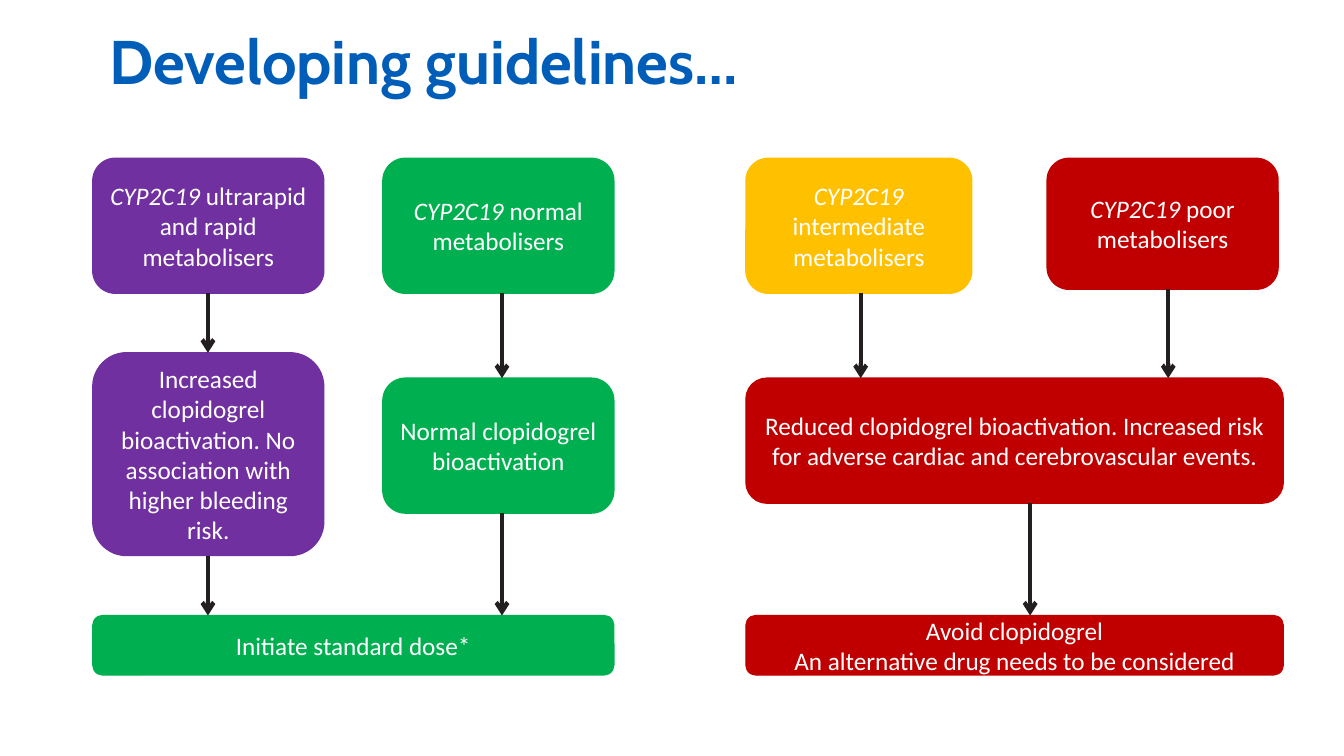
from lxml.etree import SubElement
from pptx import Presentation
from pptx.dml.color import RGBColor
from pptx.enum.shapes import MSO_CONNECTOR, MSO_SHAPE
from pptx.enum.text import MSO_ANCHOR, PP_ALIGN
from pptx.oxml.ns import qn
from pptx.util import Cm, Pt

TITLE = "Developing guidelines…"
GENE = "CYP2C19"

# name: (colour, left, top, width, height, paragraphs), lengths in cm
BOXES = {
    "rapid": ("purple", 2.34, 3.99, 5.82, 3.4, [GENE + " ultrarapid and rapid metabolisers"]),
    "normal": ("green", 9.65, 3.99, 5.82, 3.4, [GENE + " normal metabolisers"]),
    "intermediate": ("amber", 18.8, 3.99, 5.69, 3.4, [GENE + " intermediate metabolisers"]),
    "poor": ("red", 26.39, 3.99, 5.82, 3.3, [GENE + " poor metabolisers"]),
    "increased": ("purple", 2.34, 8.89, 5.82, 5.11, [
        "Increased clopidogrel bioactivation. No association with higher bleeding risk."]),
    "unchanged": ("green", 9.65, 9.53, 5.82, 3.4, ["Normal clopidogrel bioactivation"]),
    "reduced": ("red", 18.8, 9.53, 13.54, 3.15, [
        "Reduced clopidogrel bioactivation. Increased risk for adverse cardiac "
        "and cerebrovascular events."]),
    "standard": ("green", 2.34, 15.51, 13.13, 1.5, ["Initiate standard dose*"]),
    "avoid": ("red", 18.8, 15.51, 13.54, 1.5, [
        "Avoid clopidogrel", "An alternative drug needs to be considered"]),
}

# (upper box, lower box, x in cm)
ARROWS = [
    ("rapid", "increased", 5.24),
    ("increased", "standard", 5.24),
    ("normal", "unchanged", 12.65),
    ("unchanged", "standard", 12.65),
    ("intermediate", "reduced", 21.69),
    ("poor", "reduced", 29.44),
    ("reduced", "avoid", 25.96),
]

THEME = {
    "purple": RGBColor(0x70, 0x30, 0xA0),
    "green": RGBColor(0x00, 0xB0, 0x50),
    "amber": RGBColor(0xFF, 0xC0, 0x00),
    "red": RGBColor(0xC0, 0x00, 0x00),
    "title": RGBColor(0x00, 0x5E, 0xB8),
    "text": RGBColor(0xFF, 0xFF, 0xFF),
    "arrow": RGBColor(0x23, 0x1F, 0x20),
    "title_font": "Cabin",
    "body_font": "Calibri",
    "title_size": Pt(44),
    "body_size": Pt(18),
    "outline": Pt(1),
    "arrow_width": Pt(3),
}


def add_title(s):
    tf = s.shapes.add_textbox(Cm(2.5), Cm(1.17), Cm(17.7), Cm(0.89)).text_frame
    tf.word_wrap = True
    tf.vertical_anchor = MSO_ANCHOR.MIDDLE
    tf.text = TITLE
    p = tf.paragraphs[0]
    p.line_spacing = 0.9
    font = p.runs[0].font
    font.name, font.size, font.bold = THEME["title_font"], THEME["title_size"], True
    font.color.rgb = THEME["title"]


def write_paragraph(p, text):
    """Write one centred paragraph, with a leading gene name in italics."""
    p.alignment = PP_ALIGN.CENTER
    parts = [GENE, text.removeprefix(GENE)] if text.startswith(GENE) else [text]
    for part in parts:
        r = p.add_run()
        r.text = part
        r.font.name, r.font.size = THEME["body_font"], THEME["body_size"]
        r.font.color.rgb = THEME["text"]
        r.font.italic = part == GENE


def add_box(s, colour, left, top, width, height, paragraphs):
    sp = s.shapes.add_shape(MSO_SHAPE.ROUNDED_RECTANGLE,
                            Cm(left), Cm(top), Cm(width), Cm(height))
    sp.shadow.inherit = False
    sp.fill.solid()
    sp.fill.fore_color.rgb = THEME[colour]
    sp.line.color.rgb = THEME[colour]
    sp.line.width = THEME["outline"]
    tf = sp.text_frame
    tf.word_wrap = True
    tf.vertical_anchor = MSO_ANCHOR.MIDDLE
    for i, text in enumerate(paragraphs):
        write_paragraph(tf.add_paragraph() if i else tf.paragraphs[0], text)


def add_arrow(s, upper, lower, x):
    """Run a vertical arrow from the foot of one box to the top of another."""
    _, _, top, _, height, _ = BOXES[upper]
    end = BOXES[lower][2]
    line = s.shapes.add_connector(MSO_CONNECTOR.STRAIGHT,
                                  Cm(x), Cm(top + height), Cm(x), Cm(end))
    line.line.color.rgb = THEME["arrow"]
    line.line.width = THEME["arrow_width"]
    SubElement(line.line._get_or_add_ln(), qn("a:tailEnd"), type="arrow")
    SubElement(line._element.spPr, qn("a:effectLst"))


def main():
    prs = Presentation()
    prs.slide_width, prs.slide_height = Cm(33.87), Cm(19.05)
    s = prs.slides.add_slide(prs.slide_layouts[6])
    add_title(s)
    for box in BOXES.values():
        add_box(s, *box)
    for arrow in ARROWS:
        add_arrow(s, *arrow)
    prs.save("out.pptx")


if __name__ == "__main__":
    main()
